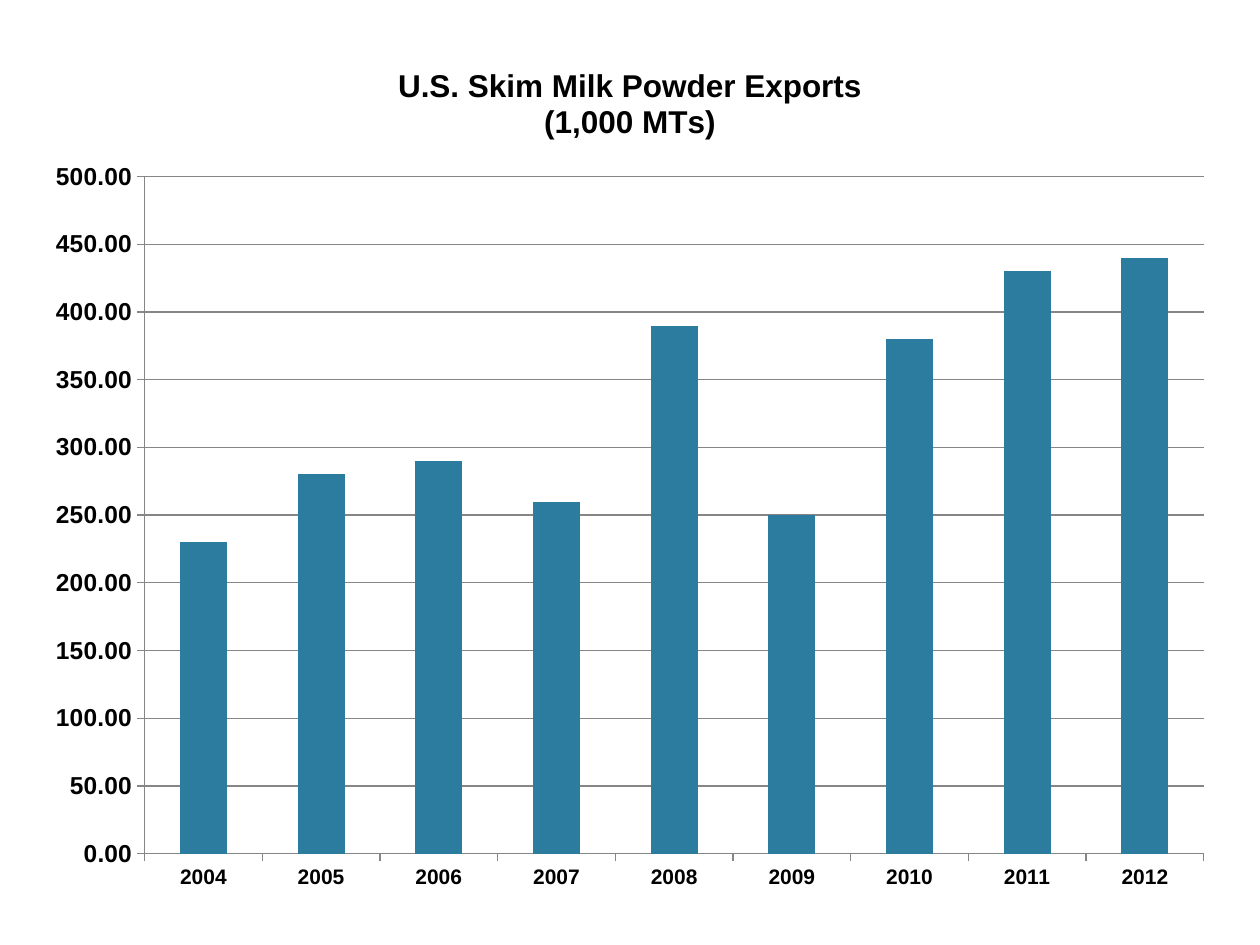
from dataclasses import dataclass

from lxml.etree import SubElement
from pptx import Presentation
from pptx.chart.data import CategoryChartData
from pptx.dml.color import RGBColor
from pptx.enum.chart import XL_CHART_TYPE, XL_TICK_MARK
from pptx.oxml.ns import qn
from pptx.util import Cm, Pt


@dataclass(frozen=True)
class Theme:
    font: str = "Arial"
    text: RGBColor = RGBColor(0x00, 0x00, 0x00)
    bar: RGBColor = RGBColor(0x2C, 0x7C, 0x9F)
    line: RGBColor = RGBColor(0x86, 0x86, 0x86)
    line_width: Pt = Pt(0.75)
    base_size: Pt = Pt(10)
    title_size: Pt = Pt(18)
    year_size: Pt = Pt(12)
    amount_size: Pt = Pt(14)


THEME = Theme()
TITLE_LINES = ("U.S. Skim Milk Powder Exports", "(1,000 MTs)")
EXPORTS = {
    "2004": 230, "2005": 280, "2006": 290, "2007": 260, "2008": 390,
    "2009": 250, "2010": 380, "2011": 430, "2012": 440,
}
PLOT_BOX = {"x": 0.094, "y": 0.159, "w": 0.886, "h": 0.78}


def style_font(font, size, bold=True):
    font.name = THEME.font
    font.size = size
    font.bold = bold
    font.color.rgb = THEME.text


def style_line(line):
    line.color.rgb = THEME.line
    line.width = THEME.line_width


def style_axis(axis, size):
    axis.major_tick_mark = XL_TICK_MARK.OUTSIDE
    axis.minor_tick_mark = XL_TICK_MARK.NONE
    style_font(axis.tick_labels.font, size)
    style_line(axis.format.line)


def add_title(chart):
    chart.has_title = True
    chart.chart_title.include_in_layout = False
    text_frame = chart.chart_title.text_frame
    for index, line in enumerate(TITLE_LINES):
        paragraph = text_frame.add_paragraph() if index else text_frame.paragraphs[0]
        run = paragraph.add_run()
        run.text = line
        style_font(run.font, THEME.title_size)


def place_plot(chart):
    plot_area = chart.element.find(".//" + qn("c:plotArea"))
    layout = plot_area.find(qn("c:layout"))
    if layout is None:
        layout = SubElement(plot_area, qn("c:layout"))
        plot_area.insert(0, layout)
    manual = SubElement(layout, qn("c:manualLayout"))
    settings = {"layoutTarget": "inner", "xMode": "edge", "yMode": "edge", **PLOT_BOX}
    for name, value in settings.items():
        SubElement(manual, qn(f"c:{name}")).set("val", str(value))


def add_export_chart(slide, left, top, width, height):
    data = CategoryChartData()
    data.categories = list(EXPORTS)
    data.add_series("Series 1", list(EXPORTS.values()))
    chart = slide.shapes.add_chart(
        XL_CHART_TYPE.COLUMN_CLUSTERED, left, top, width, height, data
    ).chart
    chart.has_legend = False
    style_font(chart.font, THEME.base_size, bold=False)
    add_title(chart)
    place_plot(chart)

    plot = chart.plots[0]
    plot.gap_width = 150
    plot.vary_by_categories = False
    fill = plot.series[0].format.fill
    fill.solid()
    fill.fore_color.rgb = THEME.bar

    style_axis(chart.category_axis, THEME.year_size)
    amounts = chart.value_axis
    style_axis(amounts, THEME.amount_size)
    amounts.minimum_scale = 0
    amounts.maximum_scale = 500
    amounts.major_unit = 50
    amounts.tick_labels.number_format = "#,##0.00"
    amounts.tick_labels.number_format_is_linked = False
    amounts.has_major_gridlines = True
    style_line(amounts.major_gridlines.format.line)


def main():
    presentation = Presentation()
    presentation.slide_width = Cm(25.4)
    presentation.slide_height = Cm(19.05)
    slide = presentation.slides.add_slide(presentation.slide_layouts[6])
    add_export_chart(slide, Cm(0.65), Cm(0.78), Cm(24.1), Cm(17.5))
    presentation.save("out.pptx")


if __name__ == "__main__":
    main()
